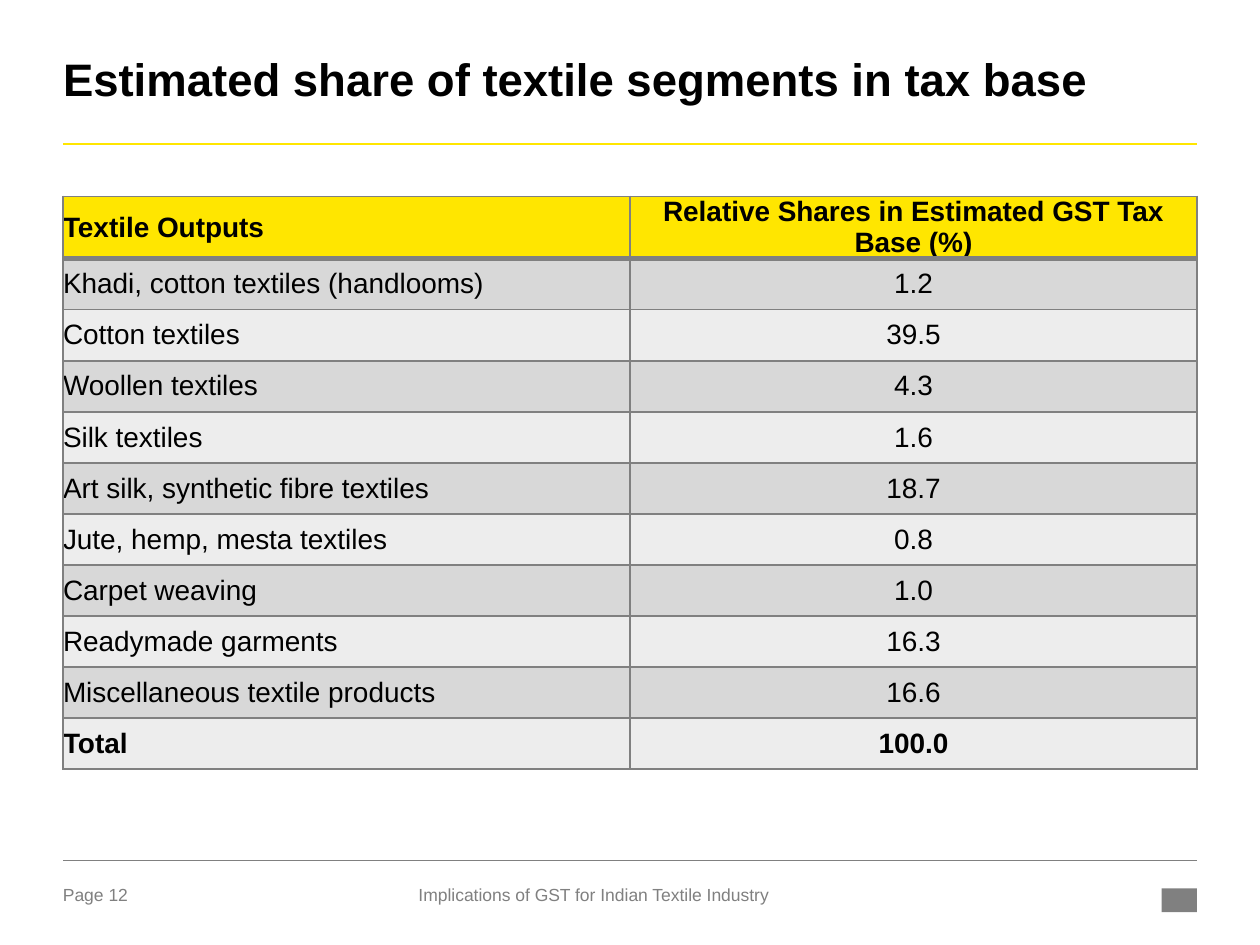
from collections import namedtuple

from lxml.etree import SubElement
from pptx import Presentation
from pptx.dml.color import RGBColor
from pptx.enum.shapes import MSO_CONNECTOR as Connector, MSO_SHAPE as Shape
from pptx.enum.text import MSO_ANCHOR as Anchor, PP_ALIGN as Align
from pptx.oxml.ns import qn
from pptx.util import Cm, Pt

BLACK = RGBColor(0x00, 0x00, 0x00)
GREY = RGBColor(0x80, 0x80, 0x80)
YELLOW = RGBColor(0xFF, 0xE6, 0x00)
DARK_BAND = RGBColor(0xD8, 0xD8, 0xD8)
LIGHT_BAND = RGBColor(0xED, 0xED, 0xED)
FONT = "Arial"

Box = namedtuple("Box", "left top width height")
HEADER = Box(Cm(1.27), Cm(1.19), Cm(22.86), Cm(1.71))
SHARES = Box(Cm(1.27), Cm(3.96), Cm(22.86), Cm(11.54))
FOOTER = Box(Cm(1.27), Cm(17.34), Cm(22.86), Cm(1.05))

TITLE = "Estimated share of textile segments in tax base"
SEGMENT_SHARES = [
    ("Textile Outputs", "Relative Shares in Estimated GST Tax Base (%)"),
    ("Khadi, cotton textiles (handlooms)", "1.2"),
    ("Cotton textiles", "39.5"),
    ("Woollen textiles", "4.3"),
    ("Silk textiles", "1.6"),
    ("Art silk, synthetic fibre textiles", "18.7"),
    ("Jute, hemp, mesta textiles", "0.8"),
    ("Carpet weaving", "1.0"),
    ("Readymade garments", "16.3"),
    ("Miscellaneous textile products", "16.6"),
    ("Total", "100.0"),
]


def style_paragraph(paragraph, size, color, bold=False, align=Align.LEFT):
    """Set the font and alignment of a whole paragraph."""
    paragraph.alignment = align
    font = paragraph.font
    font.name, font.size, font.bold = FONT, Pt(size), bold
    font.color.rgb = color


def clear_margins(holder):
    """Remove the inner margins of a text frame or table cell."""
    holder.margin_left = holder.margin_right = 0
    holder.margin_top = holder.margin_bottom = 0


def add_rule(slide, left, top, width, color, weight):
    """Draw a horizontal rule without a shadow."""
    rule = slide.shapes.add_connector(
        Connector.STRAIGHT, left, top, left + width, top)
    rule.line.color.rgb = color
    rule.line.width = Pt(weight)
    SubElement(rule._element.spPr, qn("a:effectLst"))


def add_label(slide, box, text, align):
    """Add one line of small grey footer text."""
    frame = slide.shapes.add_textbox(*box).text_frame
    frame.word_wrap = True
    clear_margins(frame)
    frame.text = text
    style_paragraph(frame.paragraphs[0], 10, GREY, align=align)


def add_header(slide, box):
    """Fill the title placeholder and underline it."""
    title = slide.shapes.title
    title.left, title.top, title.width = box.left, box.top, box.width
    title.height = Cm(1.35)
    frame = title.text_frame
    clear_margins(frame)
    frame.vertical_anchor = Anchor.TOP
    frame.text = TITLE
    heading = frame.paragraphs[0]
    style_paragraph(heading, 26, BLACK, bold=True)
    heading.line_spacing = 0.85
    add_rule(slide, box.left, box.top + box.height, box.width, YELLOW, 1.5)


def add_borders(cell, top, bottom):
    """Give a cell grey borders, with the top and bottom weights in points."""
    properties = cell._tc.get_or_add_tcPr()
    for side, weight in (("L", 1), ("R", 1), ("T", top), ("B", bottom)):
        border = SubElement(properties, qn(f"a:ln{side}"), w=str(Pt(weight)))
        fill = SubElement(border, qn("a:solidFill"))
        SubElement(fill, qn("a:srgbClr"), val=str(GREY))


def add_shares_table(slide, box):
    """Build the banded table of segment shares."""
    row_count = len(SEGMENT_SHARES)
    table = slide.shapes.add_table(row_count, 2, *box).table
    for column in table.columns:
        column.width = box.width // 2
    heading_height = Cm(1.24)
    for row in table.rows:
        row.height = (box.height - heading_height) // (row_count - 1)
    table.rows[0].height = heading_height

    for r, entries in enumerate(SEGMENT_SHARES):
        band = YELLOW if r == 0 else DARK_BAND if r % 2 else LIGHT_BAND
        for c, entry in enumerate(entries):
            cell = table.cell(r, c)
            clear_margins(cell)
            cell.vertical_anchor = Anchor.MIDDLE
            add_borders(cell, 3 if r == 1 else 1, 3 if r == 0 else 1)
            cell.fill.solid()
            cell.fill.fore_color.rgb = band
            cell.text = entry
            style_paragraph(cell.text_frame.paragraphs[0], 16, BLACK,
                            bold=r in (0, row_count - 1),
                            align=Align.CENTER if c else Align.LEFT)


def add_footer(slide, box):
    """Place the footer rule, page number, talk title and logo block."""
    add_rule(slide, box.left, box.top, box.width, GREY, 0.25)
    label_top, label_height = box.top + Cm(0.49), Cm(0.56)
    add_label(slide, Box(box.left, label_top, Cm(1.85), label_height),
              "Page 12", Align.LEFT)
    add_label(slide, Box(box.left + Cm(5.92), label_top, Cm(9.55), label_height),
              "Implications of GST for Indian Textile Industry", Align.CENTER)
    logo_width = Cm(0.71)
    logo = slide.shapes.add_shape(
        Shape.RECTANGLE, box.left + box.width - logo_width,
        box.top + Cm(0.57), logo_width, Cm(0.48))
    logo.shadow.inherit = False
    logo.fill.solid()
    logo.fill.fore_color.rgb = GREY
    logo.line.fill.background()


def main():
    """Build and save the slide."""
    deck = Presentation()
    deck.slide_width, deck.slide_height = Cm(25.4), Cm(19.05)
    slide = deck.slides.add_slide(deck.slide_layouts[5])
    add_header(slide, HEADER)
    add_shares_table(slide, SHARES)
    add_footer(slide, FOOTER)
    deck.save("out.pptx")


if __name__ == "__main__":
    main()
